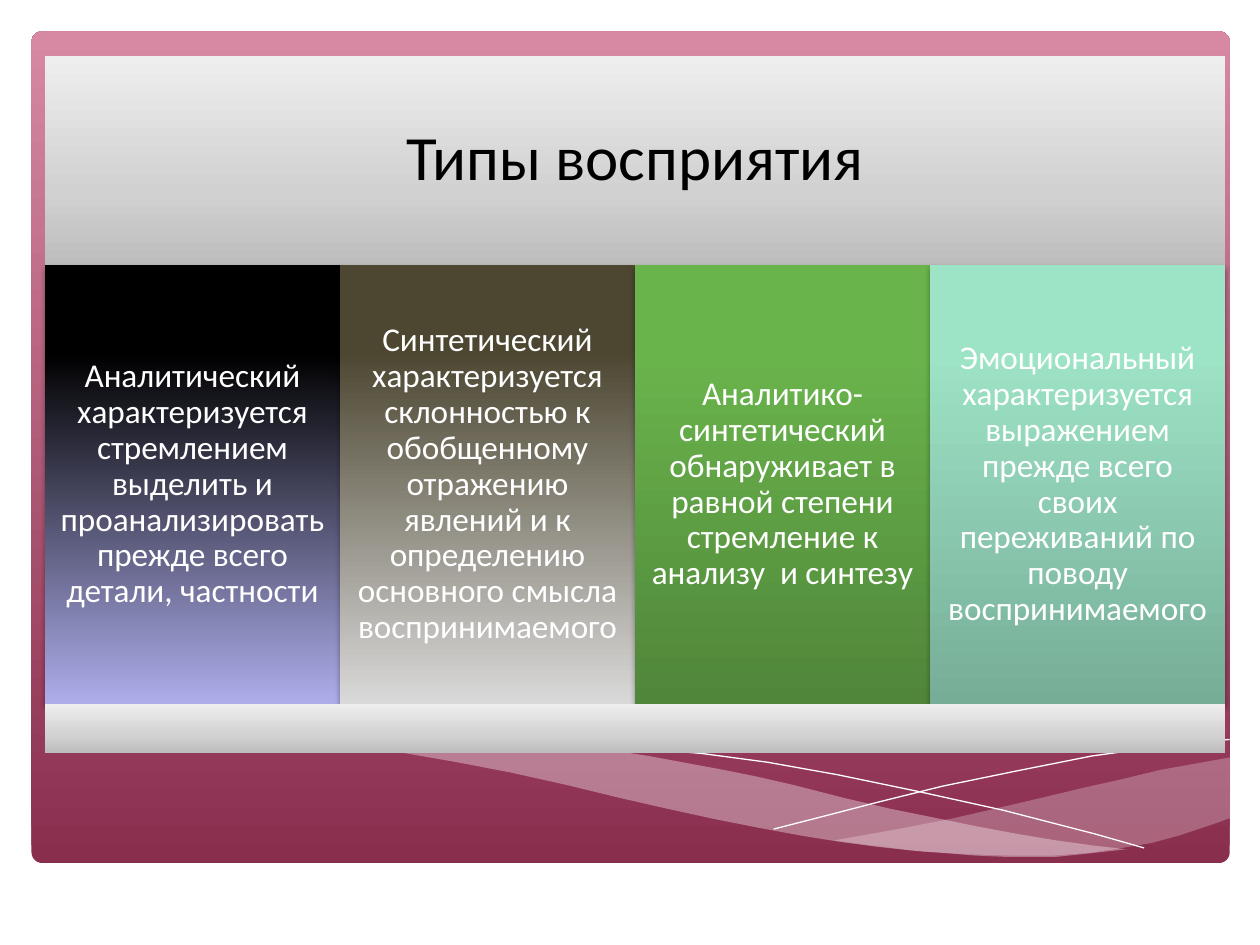
from dataclasses import dataclass

from pptx import Presentation
from pptx.dml.color import RGBColor
from pptx.enum import shapes, text
from pptx.oxml import ns
from pptx.util import Pt
from lxml import etree

Stops = tuple[tuple[int, str], ...]
Points = list[tuple[float, float]]


@dataclass(frozen=True)
class Theme:
    font: str = "Calibri"
    title_size: float = 36
    body_size: float = 19
    title_color: str = "000000"
    body_color: str = "FFFFFF"
    wave: str = "F4E7ED"
    strand: str = "FFFFFF"
    shadow: str = "000000"
    # Gradient stops run from the bottom of a panel to its top
    backdrop: Stops = ((0, "8A2E4E"), (100, "D788A3"))
    band: Stops = ((0, "BDBDBD"), (35, "D1D1D1"), (100, "EEEEEE"))


@dataclass(frozen=True)
class Box:
    left: float
    top: float
    width: float
    height: float


@dataclass(frozen=True)
class PerceptionType:
    description: str
    bottom: str
    top: str


@dataclass(frozen=True)
class Wave:
    points: Points
    opacity: int


THEME = Theme()
LEFT, WIDTH = 25.7, 674.4
HEADER = Box(LEFT, 32, WIDTH, 119.4)
COLUMN_TOP, COLUMN_HEIGHT = 151.4, 250.8
FOOTER = Box(LEFT, 402.2, WIDTH, 28)

TYPES = [
    PerceptionType("Аналитический характеризуется стремлением выделить и "
                   "проанализировать прежде всего детали, частности", "ADADEB", "000000"),
    PerceptionType("Синтетический характеризуется склонностью к обобщенному отражению "
                   "явлений и к определению основного смысла воспринимаемого",
                   "D9D9D9", "4D4732"),
    PerceptionType("Аналитико-синтетический обнаруживает в равной степени стремление "
                   "к анализу  и синтезу", "50863A", "6AB44C"),
    PerceptionType("Эмоциональный характеризуется выражением прежде всего своих "
                   "переживаний по поводу воспринимаемого", "76AD97", "9DE3C6"),
]

WAVES = [
    Wave([(703.4, 432.7), (683.3, 436.3), (663.1, 439.9), (642.2, 445), (619.9, 450),
          (580.3, 459.4), (542.9, 468), (509, 474.5), (476.6, 480.2), (498.2, 483.1),
          (527.8, 486.7), (554.4, 488.2), (578.9, 488.9), (601.2, 488.9), (622.1, 487.4),
          (640.8, 484.6), (658.1, 481.7), (673.9, 477.4), (693.4, 470.9),
          (703.4, 467.3)], 29),
    Wave([(643.7, 485.3), (624.2, 483.1), (603.4, 480.2), (581.8, 476.6), (558.7, 472.3),
          (534.2, 467.3), (509, 462.2), (481.7, 455.8), (453.6, 448.6), (431.3, 443.5),
          (409.7, 439.2), (390.2, 435.6), (370.8, 432), (352.1, 429.1), (318.2, 425.5),
          (288, 423.4), (260.6, 423.4), (236.2, 424.1), (206.6, 427), (232.6, 430.6),
          (261.4, 435.6), (291.6, 441.4), (324, 448.6), (353.5, 455.8), (381.6, 462.2),
          (408.2, 468), (433.4, 473), (457.2, 477.4), (479.5, 481), (500.4, 483.8),
          (520.6, 486), (539.3, 487.4), (557.3, 488.9), (573.8, 489.6), (604.1, 489.6),
          (625, 487.4)], 40),
]

STRANDS: list[Points] = [
    [(223.2, 429.8), (236.9, 427.7), (254.2, 425.5), (279.4, 424.1), (311.8, 424.1),
     (337.7, 424.8), (367.2, 427.7), (401, 430.6), (438.5, 435.6), (478.8, 442.8),
     (524.2, 452.2), (573.1, 463), (625.7, 476.6), (653.8, 484.6)],
    [(442.1, 473.8), (470.2, 466.6), (501.1, 458.6), (538.6, 449.3), (581, 440.6),
     (624.2, 432), (655.9, 427.7), (684.7, 424.1), (702.7, 422.6)],
]


def add_color(parent, color: str, opacity: int = 100) -> None:
    node = etree.SubElement(parent, ns.qn("a:srgbClr"), val=color)
    if opacity < 100:
        etree.SubElement(node, ns.qn("a:alpha"), val=str(opacity * 1000))


def draw_panel(slide, box: Box, stops: Stops, kind=shapes.MSO_SHAPE.RECTANGLE):
    panel = slide.shapes.add_shape(kind, Pt(box.left), Pt(box.top),
                                   Pt(box.width), Pt(box.height))
    panel.shadow.inherit = False
    panel.line.fill.background()
    panel.fill.gradient()
    panel.fill.gradient_angle = 90
    stop_list = panel._element.spPr.find(".//" + ns.qn("a:gsLst"))
    for old_stop in list(stop_list):
        stop_list.remove(old_stop)
    for position, color in stops:
        stop = etree.SubElement(stop_list, ns.qn("a:gs"), pos=str(position * 1000))
        add_color(stop, color)
    return panel


def cast_shadow(panel) -> None:
    effects = panel._element.spPr.find(ns.qn("a:effectLst"))
    shadow = etree.SubElement(effects, ns.qn("a:outerShdw"), blurRad=str(Pt(3.1)),
                              dist=str(Pt(1.8)), dir="5400000", rotWithShape="0")
    add_color(shadow, THEME.shadow, 35)


def write(panel, wording: str, size: float, color: str, inset: float) -> None:
    frame = panel.text_frame
    frame.word_wrap = True
    frame.vertical_anchor = text.MSO_ANCHOR.MIDDLE
    frame.margin_left = frame.margin_right = Pt(inset)
    frame.margin_top = frame.margin_bottom = Pt(inset)
    paragraph = frame.paragraphs[0]
    paragraph.alignment = text.PP_ALIGN.CENTER
    paragraph.line_spacing = 0.9
    run = paragraph.add_run()
    run.text = wording
    run.font.name = THEME.font
    run.font.size = Pt(size)
    run.font.color.rgb = RGBColor.from_string(color)


def draw_outline(slide, points: Points, close: bool):
    start, *rest = [(Pt(x), Pt(y)) for x, y in points]
    builder = slide.shapes.build_freeform(*start)
    builder.add_line_segments(rest, close=close)
    outline = builder.convert_to_shape()
    outline.shadow.inherit = False
    return outline


def draw_wave(slide, wave: Wave) -> None:
    outline = draw_outline(slide, wave.points, close=True)
    outline.line.fill.background()
    outline.fill.solid()
    outline.fill.fore_color.rgb = RGBColor.from_string(THEME.wave)
    color = outline._element.spPr.find(ns.qn("a:solidFill"))[0]
    etree.SubElement(color, ns.qn("a:alpha"), val=str(wave.opacity * 1000))


def draw_strand(slide, points: Points) -> None:
    outline = draw_outline(slide, points, close=False)
    outline.fill.background()
    outline.line.color.rgb = RGBColor.from_string(THEME.strand)
    outline.line.width = Pt(0.75)


def main() -> None:
    deck = Presentation()
    deck.slide_width, deck.slide_height = Pt(720), Pt(540)
    slide = deck.slides.add_slide(deck.slide_layouts[6])

    # Backdrop with waves
    backdrop = draw_panel(slide, Box(18, 18, 684.7, 475.2), THEME.backdrop,
                          shapes.MSO_SHAPE.ROUNDED_RECTANGLE)
    backdrop.adjustments[0] = 0.013
    for wave in WAVES:
        draw_wave(slide, wave)
    for strand in STRANDS:
        draw_strand(slide, strand)

    # Header
    header = draw_panel(slide, HEADER, THEME.band)
    write(header, "Типы восприятия", THEME.title_size, THEME.title_color, 10.8)

    # One column per type of perception
    column_width = WIDTH / len(TYPES)
    for index, kind in enumerate(TYPES):
        box = Box(LEFT + index * column_width, COLUMN_TOP, column_width, COLUMN_HEIGHT)
        column = draw_panel(slide, box, ((0, kind.bottom), (80, kind.top), (100, kind.top)))
        cast_shadow(column)
        write(column, kind.description, THEME.body_size, THEME.body_color, 5.8)

    # Footer
    draw_panel(slide, FOOTER, THEME.band)
    deck.save("out.pptx")


if __name__ == "__main__":
    main()
